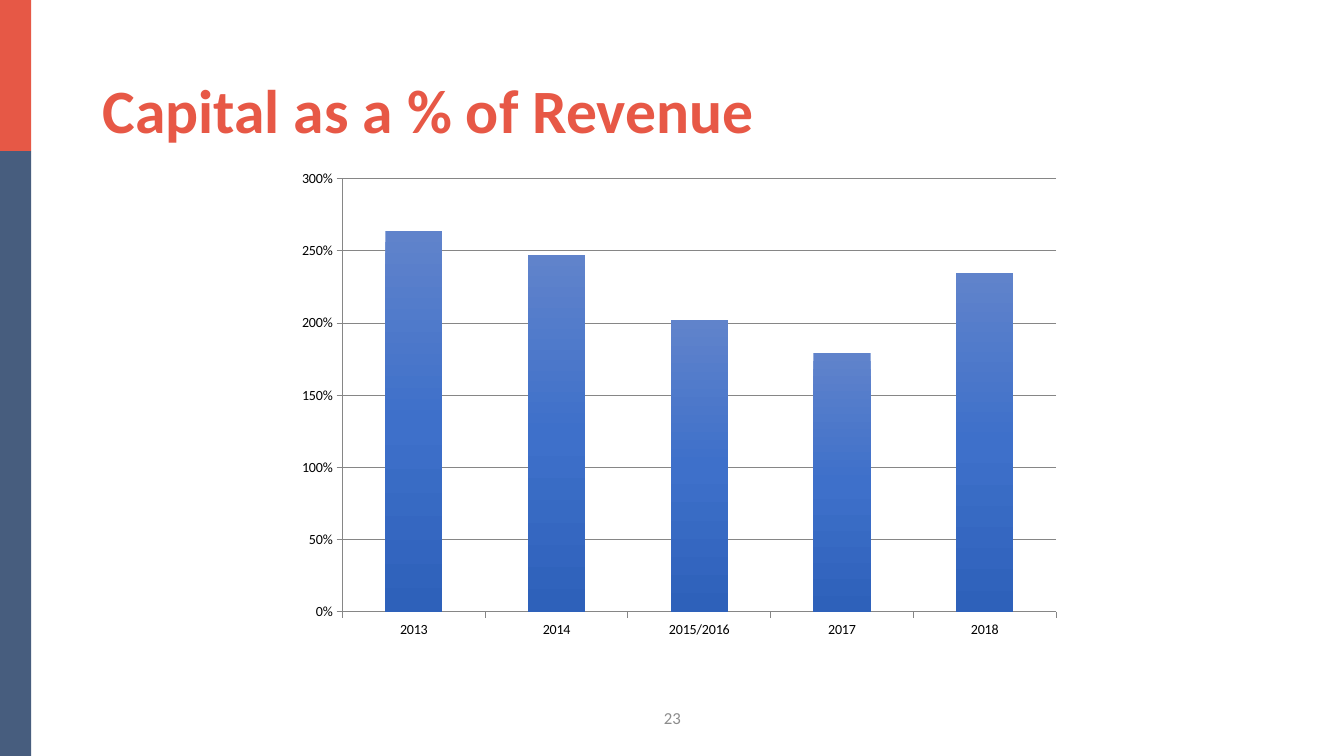
"""Build the capital-to-revenue column chart slide."""
from copy import deepcopy

from pptx import Presentation
from pptx.chart.data import CategoryChartData
from pptx.dml.color import RGBColor
from pptx.enum import chart as ch, shapes, text
from pptx.util import Inches, Pt

CORAL = RGBColor(0xE6, 0x58, 0x46)
TITLE_CORAL = RGBColor(0xE7, 0x58, 0x46)
SLATE = RGBColor(0x47, 0x5D, 0x7E)
GRAY = RGBColor(0x8C, 0x8C, 0x8C)
AXIS_GRAY = RGBColor(0x86, 0x86, 0x86)
BLACK = RGBColor(0, 0, 0)
COLUMN_STOPS = [
    (0, RGBColor(0x60, 0x83, 0xCB)),
    (0.5, RGBColor(0x3E, 0x70, 0xCA)),
    (1, RGBColor(0x2E, 0x61, 0xBA)),
]
FONT = "Calibri"

BANDS = [(1.5, CORAL), (6, SLATE)]
BAND_WIDTH = 0.31
TEXTS = [
    ("Capital as a % of Revenue", (0.92, 0.4, 11.5, 1.45), text.PP_ALIGN.LEFT, 0.9,
     {"size": Pt(44), "bold": True}, TITLE_CORAL),
    ("23", (5.17, 6.92, 3, 0.4), text.PP_ALIGN.CENTER, 1,
     {"size": Pt(12), "bold": False}, GRAY),
]
CHART_BOX = (2.84, 1.6, 7.79, 4.82)
CAPITAL = {"2013": 2.64, "2014": 2.47, "2015/2016": 2.02, "2017": 1.79, "2018": 2.35}


def set_all(obj, values):
    for name, value in values.items():
        setattr(obj, name, value)


def add_bands(s):
    top = 0
    for height, color in BANDS:
        sp = s.shapes.add_shape(shapes.MSO_SHAPE.RECTANGLE, *map(Inches, (0, top, BAND_WIDTH, height)))
        sp.shadow.inherit = False
        sp.fill.solid()
        sp.fill.fore_color.rgb = color
        sp.line.fill.background()
        top += height


def add_text(s, words, box, align, spacing, font, color):
    tf = s.shapes.add_textbox(*map(Inches, box)).text_frame
    set_all(tf, {"word_wrap": True, "vertical_anchor": text.MSO_ANCHOR.MIDDLE})
    p = tf.paragraphs[0]
    set_all(p, {"alignment": align, "line_spacing": spacing})
    r = p.add_run()
    r.text = words
    set_all(r.font, {"name": FONT, **font})
    r.font.color.rgb = color


def add_capital_chart(s):
    data = CategoryChartData(number_format="0%")
    data.categories = list(CAPITAL)
    data.add_series("Series 1", list(CAPITAL.values()))
    chart = s.shapes.add_chart(ch.XL_CHART_TYPE.COLUMN_CLUSTERED, *map(Inches, CHART_BOX), data).chart
    set_all(chart, {"has_legend": False, "has_title": False})
    set_all(chart.font, {"name": FONT, "size": Pt(10)})
    chart.font.color.rgb = BLACK
    plot = chart.plots[0]
    set_all(plot, {"gap_width": 150, "vary_by_categories": False})

    fill = plot.series[0].format.fill
    fill.gradient()
    fill.gradient_angle = 270
    stops = plot.series[0].format.element.xpath(".//a:gsLst")[0] if hasattr(
        plot.series[0].format, "element") else chart.element.xpath(".//a:gsLst")[0]
    stops.append(deepcopy(stops[-1]))
    for stop, (position, color) in zip(fill.gradient_stops, COLUMN_STOPS):
        stop.position = position
        stop.color.rgb = color

    value_axis = chart.value_axis
    set_all(value_axis, {"minimum_scale": 0, "maximum_scale": 3, "major_unit": 0.5,
                         "has_major_gridlines": True})
    set_all(value_axis.tick_labels, {"number_format": "0%", "number_format_is_linked": False})
    for axis in (chart.category_axis, value_axis):
        axis.major_tick_mark = ch.XL_TICK_MARK.OUTSIDE
    for part in (chart.category_axis, value_axis, value_axis.major_gridlines):
        part.format.line.color.rgb = AXIS_GRAY
        part.format.line.width = Pt(0.75)


def main():
    prs = Presentation()
    set_all(prs, {"slide_width": Inches(13.33), "slide_height": Inches(7.5)})
    s = prs.slides.add_slide(prs.slide_layouts[6])
    add_bands(s)
    for item in TEXTS:
        add_text(s, *item)
    add_capital_chart(s)
    prs.save("out.pptx")


if __name__ == "__main__":
    main()
